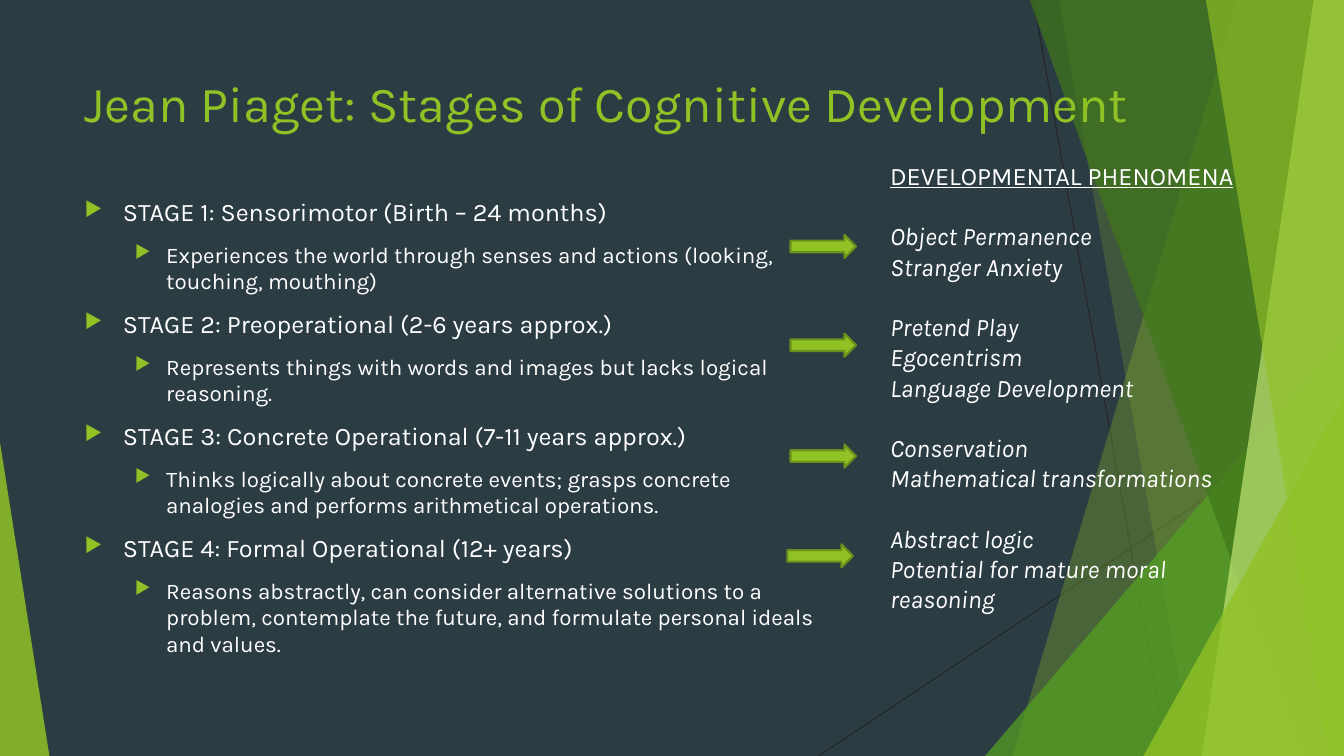
from dataclasses import dataclass

from lxml.etree import SubElement
from pptx import Presentation
from pptx.dml.color import RGBColor
from pptx.enum.shapes import MSO_CONNECTOR, MSO_SHAPE
from pptx.oxml.ns import qn
from pptx.util import Pt

PX = 9144  # EMU per px, 100 px to the inch
SLIDE_W, SLIDE_H = 1333, 750
FONT = "Karla"

SLATE = RGBColor(0x2C, 0x3C, 0x43)
CHARCOAL = RGBColor(0x26, 0x26, 0x26)
WHITE = RGBColor(0xFF, 0xFF, 0xFF)
LIME = RGBColor(0x90, 0xC2, 0x26)
OLIVE = RGBColor(0x6B, 0x90, 0x1C)
GREEN = RGBColor(0x54, 0xA0, 0x21)
FOREST = RGBColor(0x3F, 0x78, 0x19)
PALE = RGBColor(0xC0, 0xE4, 0x74)


@dataclass
class Band:
    """A facet from its slanted left edge to the right edge of the slide."""
    top_x: int
    bottom_x: int
    color: RGBColor
    alpha: int


@dataclass
class Corner:
    """A right triangle standing on the bottom edge of the slide."""
    left: int
    top: int
    width: int
    apex: float
    color: RGBColor
    alpha: int


@dataclass
class Stage:
    heading: str
    detail: str
    phenomena: list[str]
    arrow_left: int
    arrow_top: int


HAIRLINES = [(1025, 0, 1158, 750), (1333, 403, 812, 750)]

FACETS = [
    Band(1228, 1004, LIME, 30),
    Band(1050, 1183, LIME, 20),
    Corner(977, 333, 356, 1, GREEN, 72),
    Band(1021, 1291, FOREST, 70),
    Band(1303, 1192, PALE, 70),
    Band(1196, 1318, LIME, 65),
    Corner(1134, 393, 199, 1, LIME, 80),
    Corner(0, 439, 49, 0, LIME, 85),
]

STAGES = [
    Stage("STAGE 1: Sensorimotor (Birth – 24 months)",
          "Experiences the world through senses and actions (looking, touching, mouthing)",
          ["Object Permanence", "Stranger Anxiety"], 784, 233),
    Stage("STAGE 2: Preoperational (2-6 years approx.)",
          "Represents things with words and images but lacks logical reasoning.",
          ["Pretend Play", "Egocentrism", "Language Development"], 784, 331),
    Stage("STAGE 3: Concrete Operational (7-11 years approx.)",
          "Thinks logically about concrete events; grasps concrete analogies "
          "and performs arithmetical operations.",
          ["Conservation", "Mathematical transformations"], 784, 441),
    Stage("STAGE 4: Formal Operational (12+ years)",
          "Reasons abstractly, can consider alternative solutions to a problem, "
          "contemplate the future, and formulate personal ideals and values.",
          ["Abstract logic", "Potential for mature moral reasoning"], 781, 540),
]


def add_hairline(shapes, x1: int, y1: int, x2: int, y2: int) -> None:
    line = shapes.add_connector(MSO_CONNECTOR.STRAIGHT, x1 * PX, y1 * PX, x2 * PX, y2 * PX)
    line.line.color.rgb = CHARCOAL
    line.line.width = Pt(0.75)
    SubElement(line._element.spPr, qn("a:effectLst"))


def add_facet(shapes, facet: Band | Corner) -> None:
    if isinstance(facet, Band):
        builder = shapes.build_freeform(facet.top_x, -1, scale=PX)
        builder.add_line_segments(
            [(SLIDE_W, -1), (SLIDE_W, SLIDE_H), (facet.bottom_x, SLIDE_H)], close=True)
        sp = builder.convert_to_shape()
    else:
        sp = shapes.add_shape(MSO_SHAPE.ISOSCELES_TRIANGLE, facet.left * PX, facet.top * PX,
                              facet.width * PX, (SLIDE_H - facet.top) * PX)
        sp.adjustments[0] = facet.apex
    sp.shadow.inherit = False
    sp.line.fill.background()
    sp.fill.solid()
    sp.fill.fore_color.rgb = facet.color
    color = sp._element.spPr.find(qn("a:solidFill"))[0]
    SubElement(color, qn("a:alpha"), val=str(facet.alpha * 1000))


def add_textbox(shapes, left: int, top: int, width: int, height: int):
    tf = shapes.add_textbox(left * PX, top * PX, width * PX, height * PX).text_frame
    tf.word_wrap = True
    return tf


def add_paragraph(tf, text: str, size: int, color: RGBColor = WHITE):
    p = tf.paragraphs[0] if not tf.text else tf.add_paragraph()
    p.text = text
    font = p.runs[0].font
    font.name, font.size, font.color.rgb = FONT, Pt(size), color
    return p


def add_bullet(p, level: int, margin: int, hanging: int) -> None:
    p.level = level
    p.space_before = Pt(10)
    pPr = p._p.get_or_add_pPr()
    pPr.set("marL", str(margin * PX))
    pPr.set("indent", str(-hanging * PX))
    SubElement(SubElement(pPr, qn("a:buClr")), qn("a:srgbClr"), val=str(LIME))
    SubElement(pPr, qn("a:buSzPct"), val="80000")
    SubElement(pPr, qn("a:buChar"), char="▶")


def add_arrow(shapes, left: int, top: int) -> None:
    sp = shapes.add_shape(MSO_SHAPE.RIGHT_ARROW, left * PX, top * PX, 65 * PX, 23 * PX)
    sp.shadow.inherit = False
    sp.fill.solid()
    sp.fill.fore_color.rgb = LIME
    sp.line.color.rgb = OLIVE
    sp.line.width = Pt(1.5)


def main() -> None:
    prs = Presentation()
    prs.slide_width, prs.slide_height = SLIDE_W * PX, SLIDE_H * PX
    s = prs.slides.add_slide(prs.slide_layouts[6])
    s.background.fill.solid()
    s.background.fill.fore_color.rgb = SLATE

    # Faceted backdrop
    for ends in HAIRLINES:
        add_hairline(s.shapes, *ends)
    for facet in FACETS:
        add_facet(s.shapes, facet)

    # Title
    title = add_textbox(s.shapes, 74, 67, 1065, 87)
    add_paragraph(title, "Jean Piaget: Stages of Cognitive Development", 36, LIME)

    # Stages on the left, phenomena on the right, an arrow between
    body = add_textbox(s.shapes, 74, 190, 761, 472)
    phenomena = add_textbox(s.shapes, 873, 154, 390, 525)
    heading = add_paragraph(phenomena, "DEVELOPMENTAL PHENOMENA", 18)
    heading.runs[0].font.underline = True
    for stage in STAGES:
        add_bullet(add_paragraph(body, stage.heading, 18), 0, 38, 38)
        add_bullet(add_paragraph(body, stage.detail, 16), 1, 81, 31)
        for i, phenomenon in enumerate(stage.phenomena):
            p = add_paragraph(phenomena, phenomenon, 18)
            p.runs[0].font.italic = True
            if i == 0:
                p.space_before = Pt(21.6)
        add_arrow(s.shapes, stage.arrow_left, stage.arrow_top)

    prs.save("out.pptx")


if __name__ == "__main__":
    main()
